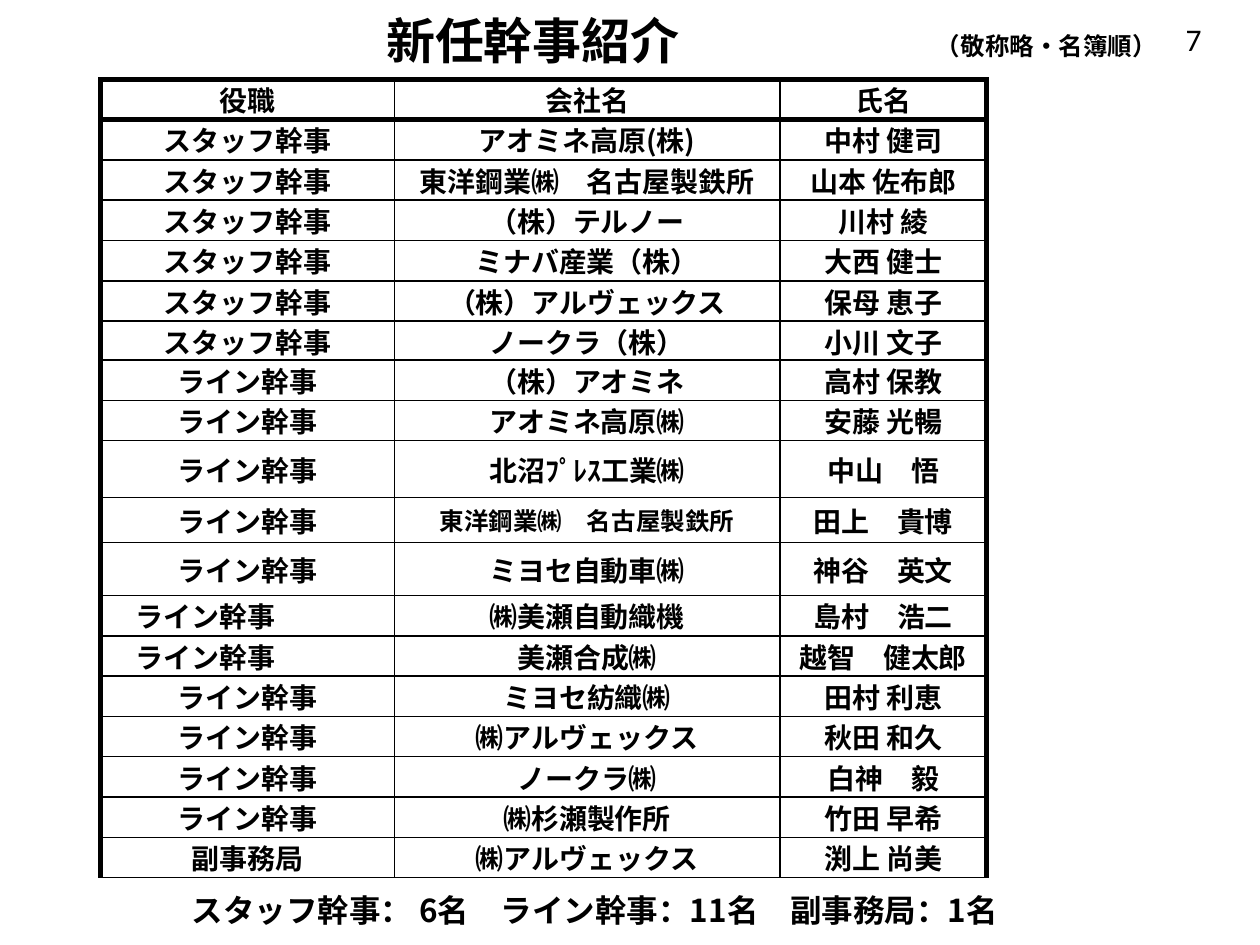
import lxml.etree
import pptx
import pptx.dml.color
import pptx.enum.text
import pptx.oxml.ns
import pptx.util

COLORS = {"ink": "000000"}
GOTHIC = "Noto Sans CJK JP"
GRID_COLUMNS, GRID_ROWS = 100, 75
COLUMN_WIDTHS = [23.3, 30.6, 16.4]
ROW_HEIGHT = 3.2
SPECIAL_HEIGHTS = {6: 3.1, 9: 4.5, 10: 3.6, 11: 4.2}
SMALL_CELLS = {(10, 1)}
SHIFTED_CELLS = {(12, 0), (13, 0)}
THICK, THIN = 3, 1
STAFF, LINE = "スタッフ幹事", "ライン幹事"
OFFICERS = [
    ("役職", "会社名", "氏名"),
    (STAFF, "アオミネ高原(株)", "中村 健司"),
    (STAFF, "東洋鋼業㈱　名古屋製鉄所", "山本 佐布郎"),
    (STAFF, "（株）テルノー", "川村 綾"),
    (STAFF, "ミナバ産業（株）", "大西 健士"),
    (STAFF, "（株）アルヴェックス", "保母 恵子"),
    (STAFF, "ノークラ（株）", "小川 文子"),
    (LINE, "（株）アオミネ", "高村 保教"),
    (LINE, "アオミネ高原㈱", "安藤 光暢"),
    (LINE, "北沼ﾌﾟﾚｽ工業㈱", "中山　悟"),
    (LINE, "東洋鋼業㈱　名古屋製鉄所", "田上　貴博"),
    (LINE, "ミヨセ自動車㈱", "神谷　英文"),
    (LINE, "㈱美瀬自動織機", "島村　浩二"),
    (LINE, "美瀬合成㈱", "越智　健太郎"),
    (LINE, "ミヨセ紡織㈱", "田村 利恵"),
    (LINE, "㈱アルヴェックス", "秋田 和久"),
    (LINE, "ノークラ㈱", "白神　毅"),
    (LINE, "㈱杉瀬製作所", "竹田 早希"),
    ("副事務局", "㈱アルヴェックス", "渕上 尚美"),
]


def grid(units):
    """Turn grid units, a tenth of an inch each, into a length."""
    return pptx.util.Inches(units / 10)


def style_paragraph(paragraph, size, name=GOTHIC, bold=True, centered=True):
    """Set the alignment and font of a paragraph."""
    alignment = pptx.enum.text.PP_ALIGN
    paragraph.alignment = alignment.CENTER if centered else alignment.LEFT
    paragraph.font.size = pptx.util.Pt(size)
    paragraph.font.name = name
    paragraph.font.bold = bold
    paragraph.font.color.rgb = pptx.dml.color.RGBColor.from_string(COLORS["ink"])


def add_text(slide, text, box, size, **style):
    """Add a wrapped text box at a grid position and return its frame."""
    frame = slide.shapes.add_textbox(*map(grid, box)).text_frame
    frame.word_wrap = True
    frame.text = text
    style_paragraph(frame.paragraphs[0], size, **style)
    return frame


def add_border(cell, side, width):
    """Draw one solid border of a table cell."""
    qualify = pptx.oxml.ns.qn
    properties = cell._tc.get_or_add_tcPr()
    line = lxml.etree.SubElement(
        properties, qualify(f"a:ln{side}"), w=str(pptx.util.Pt(width)))
    fill = lxml.etree.SubElement(line, qualify("a:solidFill"))
    lxml.etree.SubElement(fill, qualify("a:srgbClr"), val=COLORS["ink"])


def fill_cell(cell, text, row, column):
    """Write one table cell with its margins, font and borders."""
    cell.text = text
    cell.margin_left = cell.margin_top = cell.margin_bottom = 0
    cell.margin_right = grid(6.7) if (row, column) in SHIFTED_CELLS else 0
    cell.vertical_anchor = pptx.enum.text.MSO_ANCHOR.MIDDLE
    size = 14 if (row, column) in SMALL_CELLS else 16
    style_paragraph(cell.text_frame.paragraphs[0], size)
    thick_sides = {
        "L": column == 0,
        "R": column == len(COLUMN_WIDTHS) - 1,
        "T": row <= 1,
        "B": row == 0,
    }
    for side, is_thick in thick_sides.items():
        add_border(cell, side, THICK if is_thick else THIN)
    cell.fill.background()


def add_officer_table(slide, left, top):
    """Add the table of new officers."""
    heights = [SPECIAL_HEIGHTS.get(row, ROW_HEIGHT) for row in range(len(OFFICERS))]
    table = slide.shapes.add_table(
        len(heights), len(COLUMN_WIDTHS), grid(left), grid(top),
        grid(sum(COLUMN_WIDTHS)), grid(sum(heights))).table
    for column, width in zip(table.columns, COLUMN_WIDTHS):
        column.width = grid(width)
    for row, height in zip(table.rows, heights):
        row.height = grid(height)
    for row, texts in enumerate(OFFICERS):
        for column, text in enumerate(texts):
            fill_cell(table.cell(row, column), text, row, column)


def main():
    """Build the slide and save it."""
    presentation = pptx.Presentation()
    presentation.slide_width = grid(GRID_COLUMNS)
    presentation.slide_height = grid(GRID_ROWS)
    slide = presentation.slides.add_slide(presentation.slide_layouts[6])

    title = add_text(slide, "新任幹事紹介", (-6, 1.2, 96.6, 4.8), 28,
                     name="Times New Roman")
    title.vertical_anchor = pptx.enum.text.MSO_ANCHOR.MIDDLE
    title.paragraphs[0].line_spacing = 0.8
    add_officer_table(slide, 8, 6.3)
    add_text(slide, "（敬称略・名簿順）", (73.3, 2, 20.1, 3.4), 14, centered=False)
    number = add_text(slide, "7", (91.4, 1.1, 7.5, 4), 18,
                      name="Calibri", bold=False, centered=False)
    number.margin_left = grid(2.7)
    add_text(slide, "スタッフ幹事： 6名　ライン幹事：11名　副事務局：1名",
             (11, 70.2, 72.4, 4.5), 18)
    presentation.save("out.pptx")


if __name__ == "__main__":
    main()
